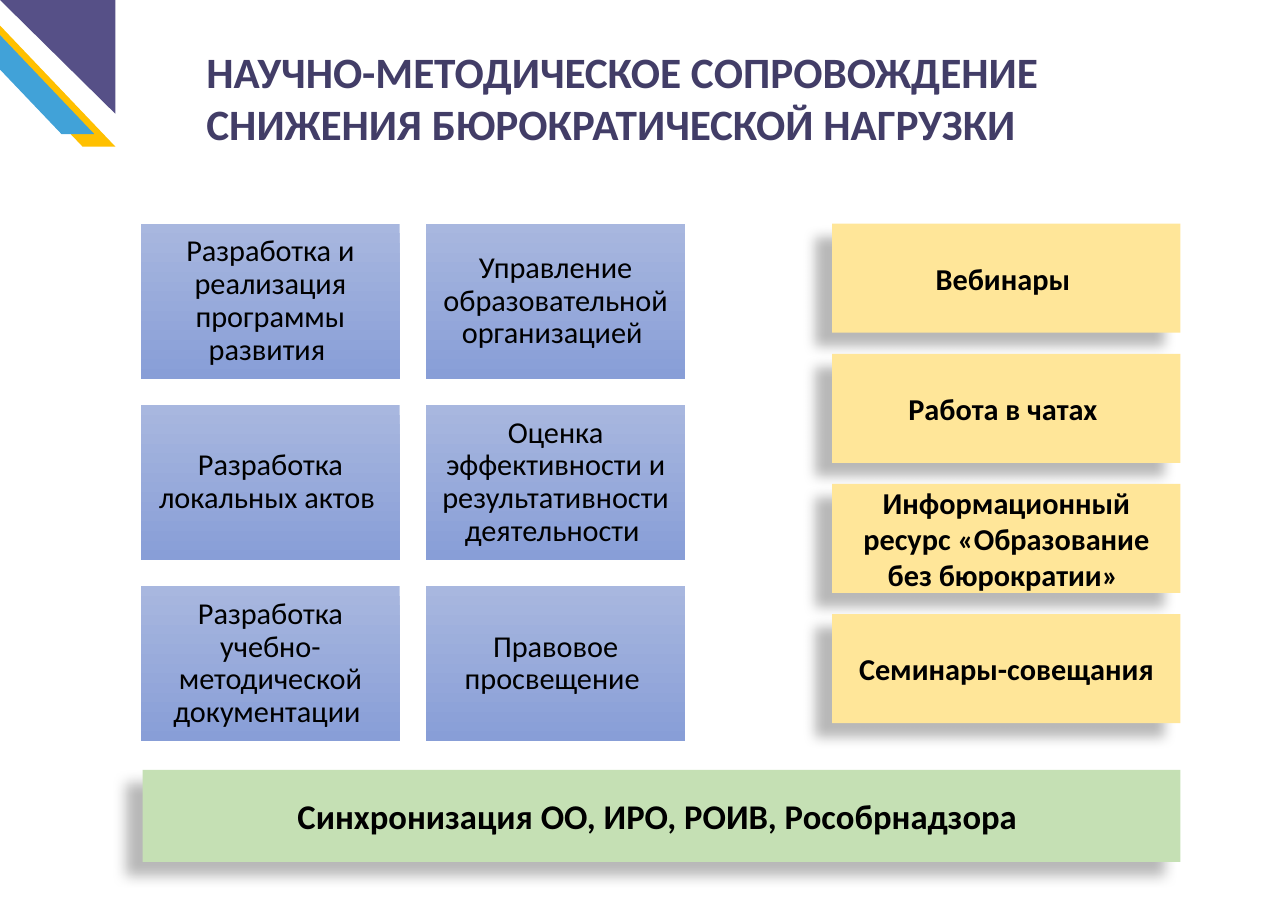
from pptx import Presentation
from pptx import util as u
from pptx.dml.color import RGBColor
from pptx.enum import shapes, text
from pptx.oxml import parse_xml
from pptx.oxml.ns import nsdecls

PX = 9144
COLORS = {
    "title": "423D67", "ink": "000000", "triangle": "565087",
    "yellow_band": "FFC000", "blue_band": "41A2D8",
    "tile_top": "A8B7DF", "tile_bottom": "889ED7",
    "format": "FFE699", "sync": "C5E0B4",
}
TOPICS = [
    "Разработка и реализация программы развития ",
    "Управление образовательной организацией ",
    "Разработка локальных актов ",
    "Оценка эффективности и результативности деятельности ",
    "Разработка учебно-методической документации ",
    "Правовое просвещение ",
]
FORMATS = [
    "Вебинары ",
    "Работа в чатах ",
    "Информационный ресурс «Образование без бюрократии» ",
    "Семинары-совещания",
]


def rgb(name):
    """Return the named colour."""
    return RGBColor.from_string(COLORS[name])


def px(*lengths):
    """Turn lengths in px into EMU."""
    return [u.Emu(round(length * PX)) for length in lengths]


def add_block(slide, kind, box, color=None):
    """Add a borderless shape without shadow, filled if a colour is given."""
    block = slide.shapes.add_shape(kind, *px(*box))
    block.shadow.inherit = False
    block.line.fill.background()
    if color:
        block.fill.solid()
        block.fill.fore_color.rgb = rgb(color)
    return block


def write(frame, wording, size, color="ink", bold=True, centred=True):
    """Write one wrapped paragraph into a text frame and return it."""
    frame.word_wrap = True
    paragraph = frame.paragraphs[0]
    if centred:
        frame.vertical_anchor = text.MSO_ANCHOR.MIDDLE
        paragraph.alignment = text.PP_ALIGN.CENTER
    run = paragraph.add_run()
    run.text = wording
    run.font.name = "Calibri"
    run.font.size = u.Pt(size)
    run.font.bold = bold
    run.font.color.rgb = rgb(color)
    return paragraph


def split(length, count, part):
    """Return the offsets of equal parts spread evenly over a length."""
    step = (length - part) / (count - 1)
    return [index * step for index in range(count)]


def corner(slide, box):
    """Draw the two bands and the triangle of the top left corner."""
    left, top, width, height = box
    bands = [(-79, -6, "yellow_band"), (-106, -22, "blue_band")]
    for dx, dy, color in bands:
        band = add_block(slide, shapes.MSO_SHAPE.PARALLELOGRAM,
                         (left + dx, top + dy, 227, 194), color)
        band.adjustments[0] = 0.953
        band.element.spPr.xfrm.set("flipH", "1")
    triangle = add_block(slide, shapes.MSO_SHAPE.RIGHT_TRIANGLE,
                         (left, top, width, height), "triangle")
    triangle.element.spPr.xfrm.set("flipH", "1")
    triangle.element.spPr.xfrm.set("flipV", "1")


def heading(slide, box):
    """Write the slide title."""
    frame = slide.shapes.add_textbox(*px(*box)).text_frame
    write(frame, "НАУЧНО-МЕТОДИЧЕСКОЕ СОПРОВОЖДЕНИЕ СНИЖЕНИЯ БЮРОКРАТИЧЕСКОЙ НАГРУЗКИ",
          40, "title", centred=False)
    frame.auto_size = text.MSO_AUTO_SIZE.SHAPE_TO_FIT_TEXT


def topic_grid(slide, box):
    """Lay out the topics as gradient tiles, two in a row."""
    left, top, width, height = box
    tile_width, tile_height = 332, 199
    places = [(left + dx, top + dy) for dy in split(height, 3, tile_height)
              for dx in split(width, 2, tile_width)]
    for place, topic in zip(places, TOPICS):
        tile = add_block(slide, shapes.MSO_SHAPE.RECTANGLE,
                         (*place, tile_width, tile_height))
        tile.fill.gradient()
        tile.fill.gradient_angle = 270
        for stop, color in zip(tile.fill.gradient_stops, ("tile_top", "tile_bottom")):
            stop.color.rgb = rgb(color)
        frame = tile.text_frame
        frame.margin_left, frame.margin_top, frame.margin_right, frame.margin_bottom = px(12, 12, 12, 12)
        write(frame, topic, 28, bold=False).line_spacing = 0.9


def shadowed_card(slide, box, wording, size, color):
    """Add a card with a soft shadow towards the lower left."""
    card = add_block(slide, shapes.MSO_SHAPE.RECTANGLE, box, color)
    card.element.spPr.effectLst.append(parse_xml(
        f'<a:outerShdw {nsdecls("a")} blurRad="{u.Pt(11.8)}" dist="{u.Pt(19.7)}" '
        f'dir="{141 * 60000}" algn="ctr" rotWithShape="0">'
        f'<a:srgbClr val="{COLORS["ink"]}"><a:alpha val="28000"/></a:srgbClr></a:outerShdw>'
    )) if hasattr(card.element.spPr, "effectLst") else None
    write(card.text_frame, wording, size)


def format_column(slide, box):
    """Stack the work formats as cards."""
    left, top, width, height = box
    card_height = 140
    for dy, wording in zip(split(height, len(FORMATS), card_height), FORMATS):
        shadowed_card(slide, (left, top + dy, width, card_height), wording, 28, "format")


def main():
    """Build the slide and save it."""
    deck = Presentation()
    deck.slide_width, deck.slide_height = px(1653, 1169)
    slide = deck.slides.add_slide(deck.slide_layouts[6])
    corner(slide, (0, 0, 148, 146))
    heading(slide, (255, 53, 1146, 145))
    topic_grid(slide, (181, 287, 698, 664))
    format_column(slide, (1068, 287, 447, 641))
    shadowed_card(slide, (183, 988, 1332, 118),
                  "Синхронизация ОО, ИРО, РОИВ, Рособрнадзора ", 32, "sync")
    deck.save("out.pptx")


if __name__ == "__main__":
    main()
